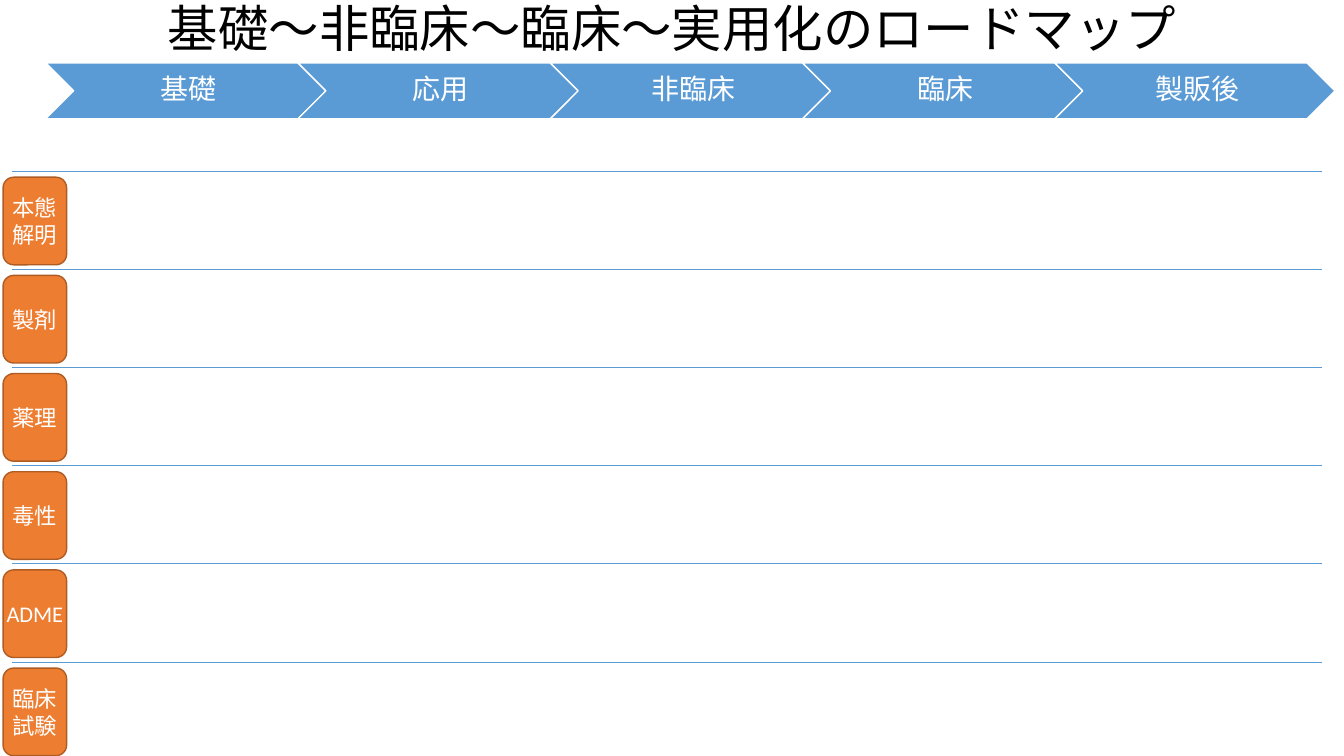
from dataclasses import dataclass

from lxml.etree import SubElement
from pptx import Presentation
from pptx.dml.color import RGBColor
from pptx.enum.shapes import MSO_CONNECTOR as Connector, MSO_SHAPE as Shape
from pptx.enum.text import MSO_ANCHOR as Anchor, PP_ALIGN as Align
from pptx.oxml.ns import qn
from pptx.util import Pt

# Content
TITLE = "基礎～非臨床～臨床～実用化のロードマップ"
STAGES = ["基礎", "応用", "非臨床", "臨床", "製販後"]
TOPICS = ["本態\n解明", "製剤", "薬理", "毒性", "ADME", "臨床\n試験"]


@dataclass(frozen=True)
class Theme:
    font: str = "Calibri"
    black: str = "000000"
    white: str = "FFFFFF"
    blue: str = "5B9BD5"
    orange: str = "ED7D31"
    brown: str = "AF5C24"
    title_size: int = 36
    stage_size: int = 20
    topic_size: int = 16


theme = Theme()

# Layout, in points
WIDTH, HEIGHT = 960, 540
TITLE_HEIGHT = 44.6
STAGE_LEFT, STAGE_TOP, STAGE_STEP = 32.6, 44.9, 180.2
STAGE_WIDTH, STAGE_HEIGHT = 200.2, 40
RULE_LEFT, RULE_RIGHT, RULE_TOP = 8.6, 944, 122.2
ROW_STEP = 70.12
TOPIC_LEFT, TOPIC_TOP, TOPIC_WIDTH, TOPIC_HEIGHT = 2.2, 126.6, 45.4, 62.6


def write(shape, text, *, size, color, margins=(0, 0, 0, 0), wrap=True, spacing=1.0):
    frame = shape.text_frame
    frame.text = text
    frame.word_wrap = wrap
    frame.vertical_anchor = Anchor.MIDDLE
    frame.margin_left, frame.margin_top, frame.margin_right, frame.margin_bottom = map(Pt, margins)
    for para in frame.paragraphs:
        para.alignment = Align.CENTER
        para.line_spacing = spacing
        for span in para.runs:
            span.font.name = theme.font
            span.font.size = Pt(size)
            span.font.color.rgb = RGBColor.from_string(color)


def add_box(page, kind, left, top, width, height, *, fill, line):
    box = page.shapes.add_shape(kind, Pt(left), Pt(top), Pt(width), Pt(height))
    box.shadow.inherit = False
    box.fill.solid()
    box.fill.fore_color.rgb = RGBColor.from_string(fill)
    box.line.color.rgb = RGBColor.from_string(line)
    box.line.width = Pt(1)
    return box


def add_rule(page, top):
    rule = page.shapes.add_connector(
        Connector.STRAIGHT, Pt(RULE_LEFT), Pt(top), Pt(RULE_RIGHT), Pt(top))
    rule.line.color.rgb = RGBColor.from_string(theme.blue)
    rule.line.width = Pt(0.5)
    SubElement(rule._element.spPr, qn("a:effectLst"))


def main():
    deck = Presentation()
    deck.slide_width, deck.slide_height = Pt(WIDTH), Pt(HEIGHT)
    page = deck.slides.add_slide(deck.slide_layouts[5])

    # Title
    title = page.shapes.title
    title.left, title.top, title.width, title.height = Pt(0), Pt(0), Pt(WIDTH), Pt(TITLE_HEIGHT)
    write(title, TITLE, size=theme.title_size, color=theme.black,
          margins=(7.2, 3.6, 7.2, 3.6), spacing=0.9)

    # Stage arrows
    for index, stage in enumerate(STAGES):
        arrow = add_box(page, Shape.CHEVRON, STAGE_LEFT + index * STAGE_STEP, STAGE_TOP,
                        STAGE_WIDTH, STAGE_HEIGHT, fill=theme.blue, line=theme.white)
        write(arrow, stage, size=theme.stage_size, color=theme.white,
              margins=(6.3, 2.1, 2.1, 2.1), spacing=0.9)

    # Topic rows: a rule above each label
    for index, topic in enumerate(TOPICS):
        offset = index * ROW_STEP
        add_rule(page, RULE_TOP + offset)
        label = add_box(page, Shape.ROUNDED_RECTANGLE, TOPIC_LEFT, TOPIC_TOP + offset,
                        TOPIC_WIDTH, TOPIC_HEIGHT, fill=theme.orange, line=theme.brown)
        write(label, topic, size=theme.topic_size, color=theme.white, wrap=False)

    deck.save("out.pptx")


if __name__ == "__main__":
    main()
